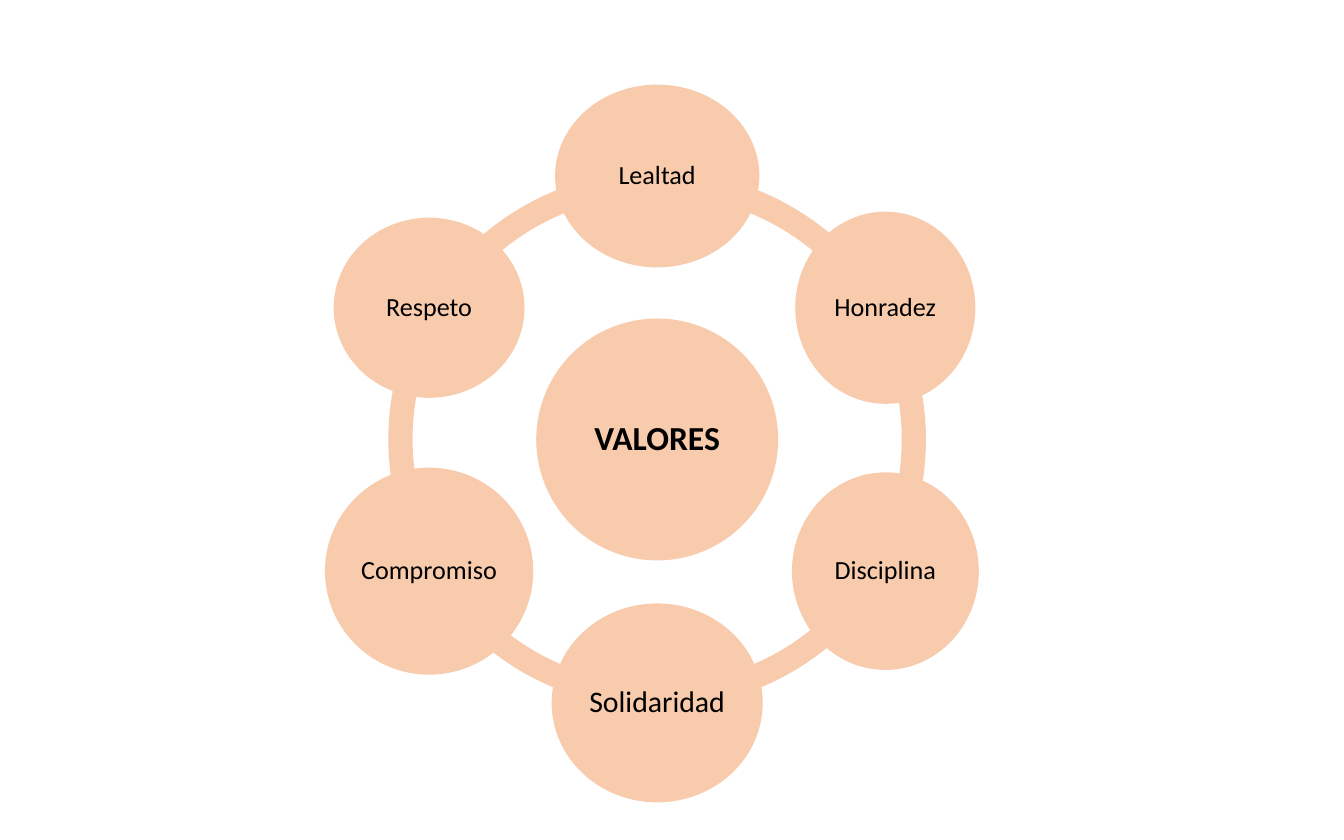
import math

from pptx import Presentation
from pptx import util as u
from pptx.dml.color import RGBColor
from pptx.enum import shapes, text

PEACH = "F8CBAD"
CENTER = (4.89, 3.27)
VALUES = [
    ("Lealtad", 1.52, 1.36, 14),
    ("Honradez", 1.34, 1.43, 14),
    ("Disciplina", 1.39, 1.47, 14),
    ("Solidaridad", 1.57, 1.48, 16),
    ("Compromiso", 1.55, 1.54, 14),
    ("Respeto", 1.42, 1.34, 14),
]


def paint(color, hex_code):
    color.rgb = RGBColor.from_string(hex_code)


def add_shape(parent, kind, cx, cy, w, h):
    sp = parent.shapes.add_shape(kind, u.Inches(cx - w / 2), u.Inches(cy - h / 2),
                                 u.Inches(w), u.Inches(h))
    sp.shadow.inherit = False
    sp.fill.solid()
    paint(sp.fill.fore_color, PEACH)
    sp.line.fill.background()
    return sp


def add_ring(parent, cx, cy, diameter):
    angles = [18, 54, 90, 126, 162, 198]
    for start, end in zip(angles, angles[1:] + angles[:1]):
        sp = add_shape(parent, shapes.MSO_SHAPE.BLOCK_ARC, cx, cy, diameter, diameter)
        for i, value in enumerate((start * 0.6, end * 0.6, 0.045)):
            sp.adjustments[i] = value


def add_circle(parent, label, cx, cy, w, h, size, bold=False):
    sp = add_shape(parent, shapes.MSO_SHAPE.OVAL, cx, cy, w, h)
    tf = sp.text_frame
    tf.word_wrap = True
    tf.vertical_anchor = text.MSO_ANCHOR.MIDDLE
    tf.margin_left = tf.margin_right = tf.margin_top = tf.margin_bottom = u.Inches(0.02)
    p = tf.paragraphs[0]
    p.alignment = text.PP_ALIGN.CENTER
    p.line_spacing = 0.9
    r = p.add_run()
    r.text = label
    r.font.name = "Calibri"
    r.font.size = u.Pt(size)
    r.font.bold = bold
    paint(r.font.color, "000000")


def add_values_cycle(s, cx, cy, radius):
    group = s.shapes.add_group_shape()
    add_ring(group, cx, cy, 4)
    add_circle(group, "VALORES", cx, cy, 1.8, 1.8, 18, bold=True)
    for i, (label, w, h, size) in enumerate(VALUES):
        angle = math.tau * i / len(VALUES)
        add_circle(group, label, cx + radius * math.sin(angle),
                   cy - radius * math.cos(angle), w, h, size)


def main():
    prs = Presentation()
    prs.slide_width = u.Inches(10)
    prs.slide_height = u.Inches(6.25)
    s = prs.slides.add_slide(prs.slide_layouts[6])
    add_values_cycle(s, *CENTER, radius=1.96)
    prs.save("out.pptx")


if __name__ == "__main__":
    main()
